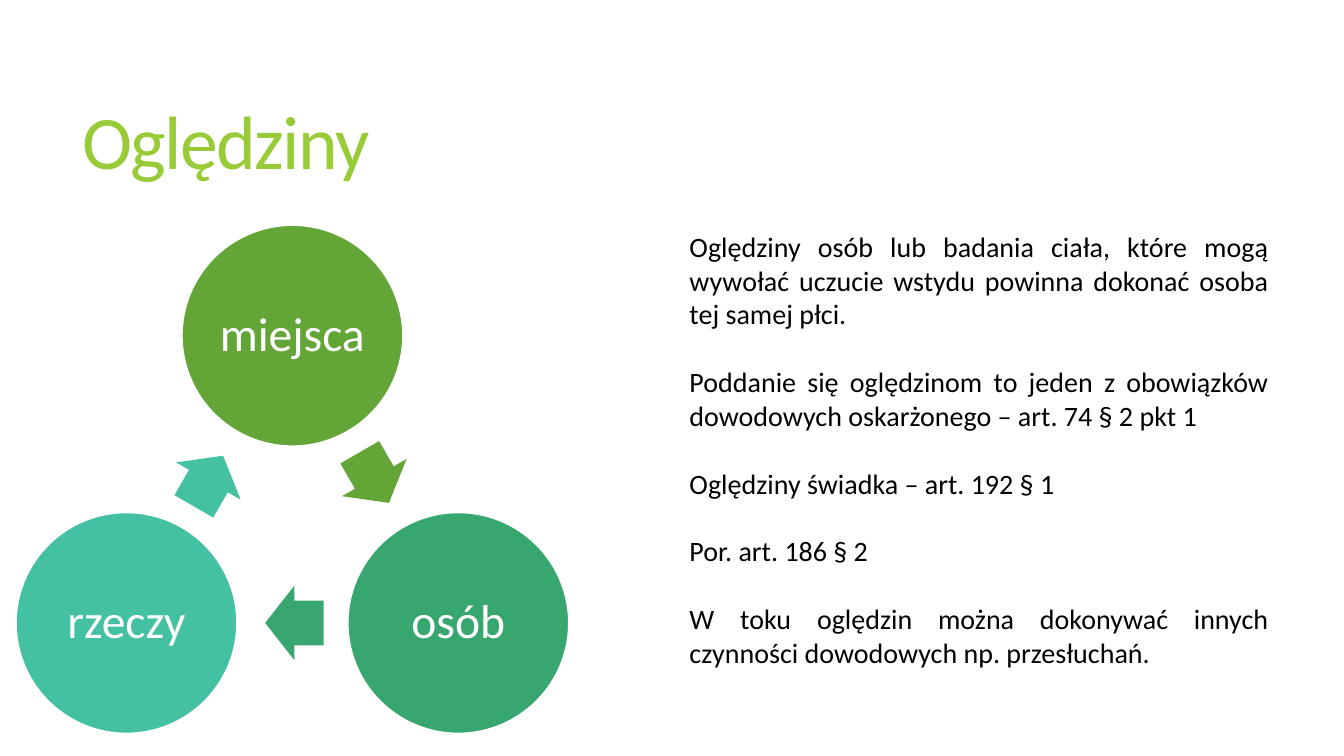
from math import cos, radians, sin

from pptx import Presentation
from pptx.dml.color import RGBColor
from pptx.enum.shapes import MSO_SHAPE as Shape
from pptx.enum.text import MSO_ANCHOR as Anchor, PP_ALIGN as Align
from pptx.util import Inches, Pt

TITLE = "Oględziny"
CYCLE = [("miejsca", "63A537"), ("osób", "37A76F"), ("rzeczy", "44C1A3")]
NOTES = [
    "Oględziny osób lub badania ciała, które mogą wywołać uczucie wstydu "
    "powinna dokonać osoba tej samej płci.",
    "Poddanie się oględzinom to jeden z obowiązków dowodowych oskarżonego "
    "– art. 74 § 2 pkt 1",
    "Oględziny świadka – art. 192 § 1",
    "Por. art. 186 § 2",
    "W toku oględzin można dokonywać innych czynności dowodowych "
    "np. przesłuchań.",
]
THEME = {
    "font": "Calibri", "title": "99CB38", "body": "000000", "light": "FFFFFF",
    "title_size": 54, "label_size": 34, "body_size": 20, "body_gap": 24.4,
}
CENTER_X, CENTER_Y, RADIUS = 2.9, 5.23, 1.9
DIAMETER = 2.19
ARROW_WIDTH, ARROW_HEIGHT, ARROW_SETBACK = 0.58, 0.74, 0.02


def color(value):
    return RGBColor.from_string(value)


def set_font(paragraph, size, value):
    paragraph.font.name = THEME["font"]
    paragraph.font.size = Pt(size)
    paragraph.font.color.rgb = color(value)


def add_text_box(left, top, width, height):
    frame = slide.shapes.add_textbox(
        Inches(left), Inches(top), Inches(width), Inches(height)).text_frame
    frame.word_wrap = True
    return frame


def add_centered(kind, x, y, width, height, fill):
    shape = slide.shapes.add_shape(
        kind, Inches(x - width / 2), Inches(y - height / 2),
        Inches(width), Inches(height))
    shape.shadow.inherit = False
    shape.fill.solid()
    shape.fill.fore_color.rgb = color(fill)
    return shape


presentation = Presentation()
presentation.slide_width, presentation.slide_height = Inches(13.33), Inches(7.5)
slide = presentation.slides.add_slide(presentation.slide_layouts[6])

# Title
frame = add_text_box(0.72, 0.55, 11.78, 1.81)
frame.vertical_anchor = Anchor.MIDDLE
paragraph = frame.paragraphs[0]
run = paragraph.add_run()
run.text = TITLE
paragraph.line_spacing = 0.85
set_font(paragraph, THEME["title_size"], THEME["title"])
run.font._element.set("spc", "-120")

# Cycle: circles at the corners of a triangle, arrows halfway along its sides
for index, (label, fill) in enumerate(CYCLE):
    angle = radians(120 * index - 90)
    circle = add_centered(
        Shape.OVAL, CENTER_X + RADIUS * cos(angle),
        CENTER_Y + RADIUS * sin(angle), DIAMETER, DIAMETER, fill)
    circle.line.color.rgb = color(THEME["light"])
    circle.line.width = Pt(1)
    frame = circle.text_frame
    frame.word_wrap = True
    frame.vertical_anchor = Anchor.MIDDLE
    frame.margin_left = frame.margin_right = Inches(0.05)
    frame.margin_top = frame.margin_bottom = Inches(0.05)
    paragraph = frame.paragraphs[0]
    paragraph.text = label
    paragraph.alignment = Align.CENTER
    paragraph.line_spacing = 0.9
    set_font(paragraph, THEME["label_size"], THEME["light"])

    heading = 60 + 120 * index
    middle = angle + radians(60)
    x = CENTER_X + RADIUS / 2 * cos(middle) - ARROW_SETBACK * cos(radians(heading))
    y = CENTER_Y + RADIUS / 2 * sin(middle) - ARROW_SETBACK * sin(radians(heading))
    arrow = add_centered(Shape.RIGHT_ARROW, x, y, ARROW_WIDTH, ARROW_HEIGHT, fill)
    arrow.line.fill.background()
    arrow.rotation = heading
    arrow.adjustments[0], arrow.adjustments[1] = 0.6, 0.5

# Notes
frame = add_text_box(6.74, 2.23, 5.94, 4.48)
for index, note in enumerate(NOTES):
    paragraph = frame.add_paragraph() if index else frame.paragraphs[0]
    paragraph.text = note
    paragraph.alignment = Align.JUSTIFY
    if index:
        paragraph.space_before = Pt(THEME["body_gap"])
    set_font(paragraph, THEME["body_size"], THEME["body"])

presentation.save("out.pptx")
